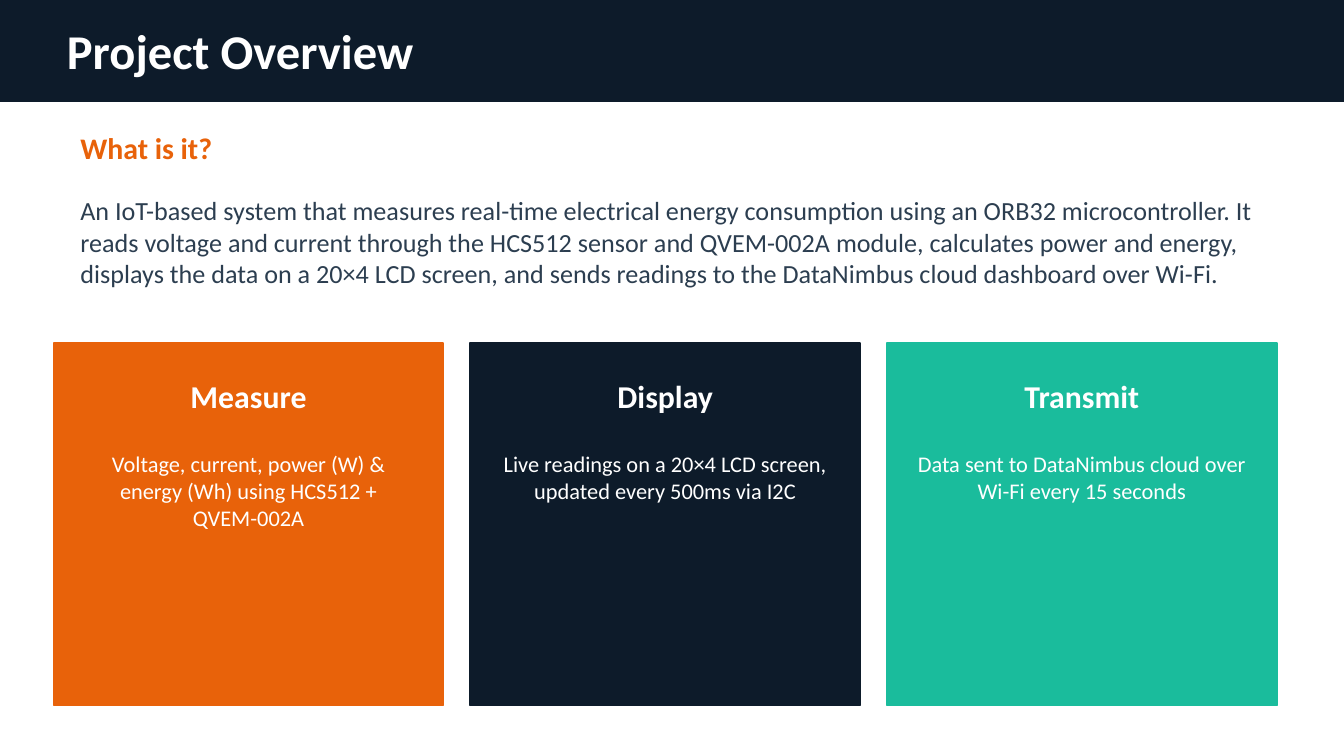
from pptx import Presentation
from pptx.dml.color import RGBColor
from pptx.enum.shapes import MSO_SHAPE as SHAPE
from pptx.enum.text import MSO_ANCHOR as ANCHOR, PP_ALIGN as ALIGN
from pptx.util import Pt

PX = 4572  # EMU, 200 px to the inch
COLORS = {
    "navy": "0D1B2A",
    "orange": "E8620A",
    "teal": "1ABC9C",
    "slate": "2C3E50",
    "white": "FFFFFF",
}

prs = Presentation()
prs.slide_width, prs.slide_height = 2000 * PX, 1125 * PX
s = prs.slides.add_slide(prs.slide_layouts[6])


def add_rect(x, y, w, h, color):
    sp = s.shapes.add_shape(SHAPE.RECTANGLE, x * PX, y * PX, w * PX, h * PX)
    sp.shadow.inherit = False
    rgb = RGBColor.from_string(COLORS[color])
    sp.fill.solid()
    sp.fill.fore_color.rgb = rgb
    sp.line.color.rgb = rgb
    sp.line.width = Pt(1)


def add_text(x, y, w, h, text, size, color, bold=False,
             align=ALIGN.LEFT, anchor=ANCHOR.MIDDLE):
    tf = s.shapes.add_textbox(x * PX, y * PX, w * PX, h * PX).text_frame
    tf.word_wrap = True
    tf.vertical_anchor = anchor
    p = tf.paragraphs[0]
    p.text = text
    p.alignment = align
    font = p.runs[0].font
    font.name = "Calibri"
    font.size = Pt(size)
    font.bold = bold
    font.color.rgb = RGBColor.from_string(COLORS[color])


# Header
add_rect(0, 0, 2000, 150, "navy")
add_text(80, 20, 1840, 110, "Project Overview", 26, "white", bold=True)

# Introduction
add_text(100, 180, 1800, 80, "What is it?", 16, "orange", bold=True)
intro = (
    "An IoT-based system that measures real-time electrical energy consumption "
    "using an ORB32 microcontroller. It reads voltage and current through the "
    "HCS512 sensor and QVEM-002A module, calculates power and energy, displays "
    "the data on a 20×4 LCD screen, and sends readings to the DataNimbus cloud "
    "dashboard over Wi-Fi."
)
add_text(100, 270, 1800, 180, intro, 14, "slate")

# Function cards
cards = [
    ("Measure", "orange",
     "Voltage, current, power (W) & energy (Wh) using HCS512 + QVEM-002A"),
    ("Display", "navy",
     "Live readings on a 20×4 LCD screen, updated every 500ms via I2C"),
    ("Transmit", "teal",
     "Data sent to DataNimbus cloud over Wi-Fi every 15 seconds"),
]
CARD_W, GAP = 580, 40
for i, (heading, color, detail) in enumerate(cards):
    x = 80 + i * (CARD_W + GAP)
    add_rect(x, 510, CARD_W, 540, color)
    add_text(x, 544, CARD_W, 90, heading, 17, "white", bold=True,
             align=ALIGN.CENTER)
    add_text(x + 20, 660, CARD_W - 40, 340, detail, 12, "white",
             align=ALIGN.CENTER, anchor=ANCHOR.TOP)

prs.save("out.pptx")
